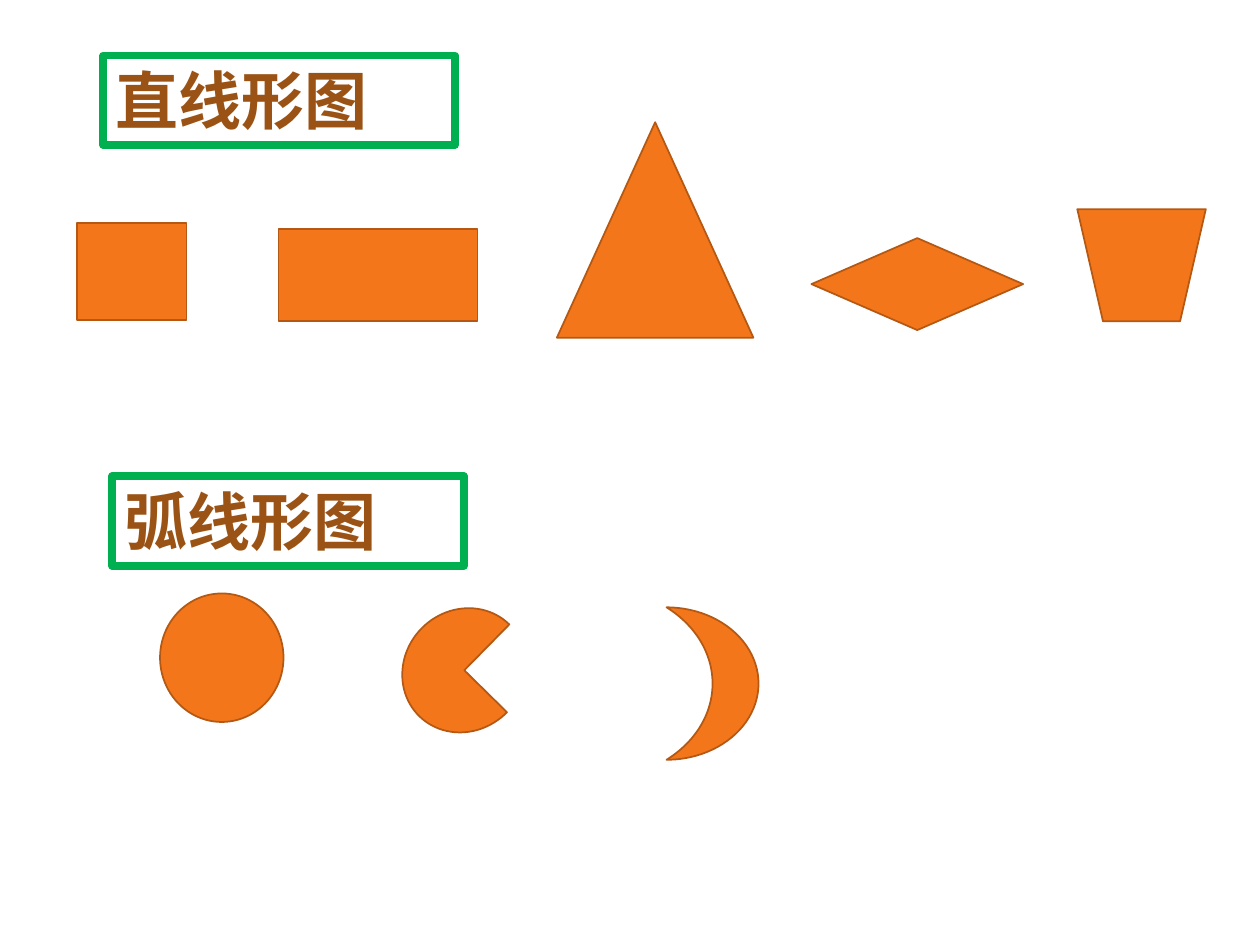
from pptx import Presentation
from pptx.dml.color import RGBColor
from pptx.enum.shapes import MSO_SHAPE
from pptx.enum.text import MSO_AUTO_SIZE
from pptx.util import Inches, Pt

RECT = MSO_SHAPE.RECTANGLE
TRIANGLE = MSO_SHAPE.ISOSCELES_TRIANGLE
DIAMOND = MSO_SHAPE.FLOWCHART_DECISION
TRAPEZOID = MSO_SHAPE.FLOWCHART_MANUAL_OPERATION
CIRCLE = MSO_SHAPE.OVAL
PIE = MSO_SHAPE.CHORD if not hasattr(MSO_SHAPE, "PIE") else MSO_SHAPE.PIE
MOON = MSO_SHAPE.MOON
GROW = MSO_AUTO_SIZE.SHAPE_TO_FIT_TEXT

ORANGE = RGBColor(0xF3, 0x77, 0x1A)
RUST = RGBColor(0xB4, 0x58, 0x13)
GREEN = RGBColor(0x00, 0xB0, 0x50)
BROWN = RGBColor(0x9A, 0x53, 0x15)

WIDTH, HEIGHT = Inches(10), Inches(7.5)
COLS, ROWS = 100, 75
LABEL_SIZE = (27.9, 7.1)

LABELS = [
    ("直线形图", 8.2, 4.4),
    ("弧线形图", 8.9, 37.8),
]
STRAIGHT_FIGURES = [
    (RECT, 6.1, 17.7, 8.7, 7.7, 0),
    (RECT, 22.1, 18.2, 15.8, 7.3, 0),
    (TRIANGLE, 44.2, 9.7, 15.6, 17.1, 0),
    (DIAMOND, 64.4, 18.9, 16.8, 7.3, 0),
    (TRAPEZOID, 85.5, 16.6, 10.2, 8.9, 0),
]
CURVED_FIGURES = [
    (CIRCLE, 12.7, 47.1, 9.8, 10.2, 0),
    (PIE, 32.1, 48.1, 9.5, 10.2, 44.5),
    (MOON, 52.9, 48.2, 7.3, 12.1, 180),
]


def cells(col, row, cols, rows):
    x, y = WIDTH / COLS, HEIGHT / ROWS
    return int(col * x), int(row * y), int(cols * x), int(rows * y)


def add_figure(s, kind, col, row, cols, rows, angle):
    sp = s.shapes.add_shape(kind, *cells(col, row, cols, rows))
    sp.shadow.inherit = False
    sp.rotation = angle
    sp.fill.solid()
    sp.fill.fore_color.rgb = ORANGE
    sp.line.color.rgb = RUST
    sp.line.width = Pt(1)


def add_label(s, text, col, row):
    sp = s.shapes.add_textbox(*cells(col, row, *LABEL_SIZE))
    sp.line.color.rgb = GREEN
    sp.line.width = Pt(4.5)
    tf = sp.text_frame
    tf.word_wrap = True
    tf.auto_size = GROW
    r = tf.paragraphs[0].add_run()
    r.text = text
    r.font.name = "Arial"
    r.font.size = Pt(36)
    r.font.bold = True
    r.font.color.rgb = BROWN


def main():
    prs = Presentation()
    prs.slide_width, prs.slide_height = WIDTH, HEIGHT
    s = prs.slides.add_slide(prs.slide_layouts[6])
    for figure in STRAIGHT_FIGURES + CURVED_FIGURES:
        add_figure(s, *figure)
    for label in LABELS:
        add_label(s, *label)
    prs.save("out.pptx")


if __name__ == "__main__":
    main()
